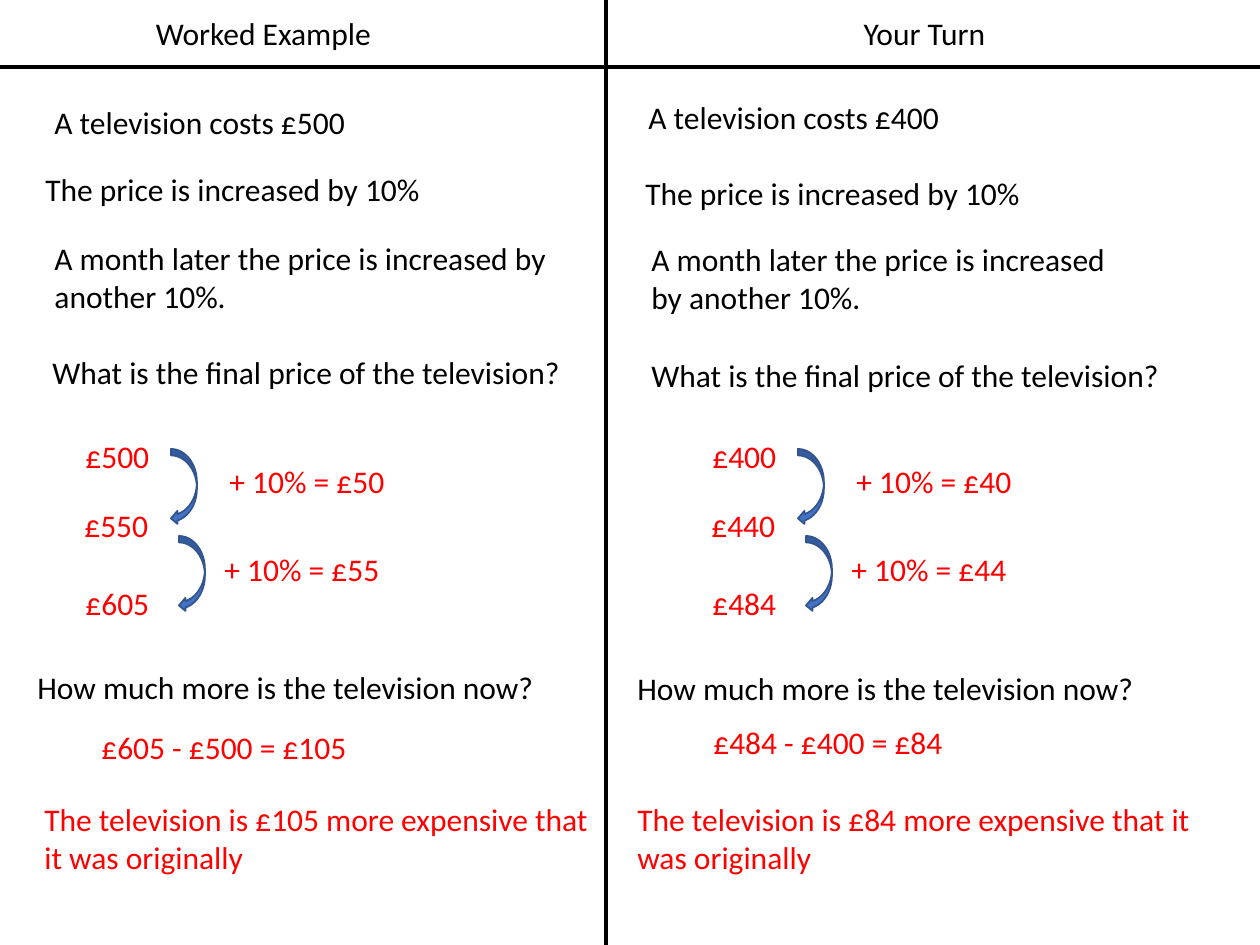
from pptx import Presentation
from pptx import util as u
from pptx.dml.color import RGBColor
from pptx.enum import shapes, text
from lxml import etree
from pptx.oxml.ns import qn

PX = 914400 // 126
WIDTH, HEIGHT = 1260, 945
BLACK = RGBColor(0x00, 0x00, 0x00)
RED = RGBColor(0xFF, 0x00, 0x00)
BLUE = RGBColor(0x44, 0x72, 0xC4)
DARK_BLUE = RGBColor(0x32, 0x54, 0x91)
LINE_H, TWO_LINES_H = 50, 89

DIVIDERS = [(606, 0, 606, HEIGHT), (0, 67, WIDTH, 67)]

# Each text: words, left, top, width
COLUMNS = [
    {
        "title": ("Worked Example", 142, 8, 243),
        "one_line": [
            ("A television costs £500", 42, 97, 319),
            ("The price is increased by 10%", 33, 164, 404),
            ("What is the final price of the television?", 40, 347, 539),
            ("How much more is the television now?", 25, 662, 528),
        ],
        "later": ("A month later the price is increased by another 10%.", 42, 233, 539),
        "working_left": 72,
        "prices": ["£500", "£550", "£605"],
        "increases": ["+ 10% = £50", "+ 10% = £55"],
        "difference": ("£605 - £500 = £105", 89, 722, 278),
        "conclusion": ("The television is £105 more expensive that it was originally",
                       32, 794, 593),
    },
    {
        "title": ("Your Turn", 803, 8, 243),
        "one_line": [
            ("A television costs £400", 636, 92, 319),
            ("The price is increased by 10%", 633, 168, 404),
            ("What is the final price of the television?", 639, 350, 539),
            ("How much more is the television now?", 625, 663, 528),
        ],
        "later": ("A month later the price is increased by another 10%.", 639, 234, 507),
        "working_left": 699,
        "prices": ["£400", "£440", "£484"],
        "increases": ["+ 10% = £40", "+ 10% = £44"],
        "difference": ("£484 - £400 = £84", 701, 717, 278),
        "conclusion": ("The television is £84 more expensive that it was originally",
                       625, 794, 593),
    },
]
# Offsets from working_left, then tops
PRICE_SPOTS = [(1, 431), (0, 500), (1, 578)]
ARROW_SPOTS = [(99, 449), (107, 536)]
INCREASE_SPOTS = [(145, 456), (140, 544)]


def emu(*lengths):
    return [n * PX for n in lengths]


def add_text(parent, words, left, top, width, height=LINE_H, color=BLACK,
             wrap=True, align=text.PP_ALIGN.LEFT):
    tf = parent.add_textbox(*emu(left, top, width, height)).text_frame
    tf.word_wrap = wrap
    tf.auto_size = text.MSO_AUTO_SIZE.SHAPE_TO_FIT_TEXT
    p = tf.paragraphs[0]
    p.text = words
    p.alignment = align
    font = p.runs[0].font
    font.name, font.size = "Calibri", u.Pt(18)
    font.color.rgb = color


def add_divider(parent, *ends):
    line = parent.add_connector(shapes.MSO_CONNECTOR.STRAIGHT, *emu(*ends))
    line.line.color.rgb = BLACK
    line.line.width = u.Pt(2.5)
    etree.SubElement(line._element.spPr, qn("a:effectLst"))


def add_arrow(parent, left, top):
    sp = parent.add_shape(shapes.MSO_SHAPE.CURVED_LEFT_ARROW, *emu(left, top, 26, 76))
    sp.shadow.inherit = False
    sp.fill.solid()
    sp.fill.fore_color.rgb = BLUE
    sp.line.color.rgb = DARK_BLUE
    sp.line.width = u.Pt(1)


def add_working(parent, column):
    """Prices down the side, each step grouped as an arrow and its increase."""
    left = column["working_left"]
    for price, (dx, top) in zip(column["prices"], PRICE_SPOTS):
        add_text(parent, price, left + dx, top, 100, color=RED)
    for words, arrow, label in zip(column["increases"], ARROW_SPOTS, INCREASE_SPOTS):
        step = parent.add_group_shape().shapes
        add_arrow(step, left + arrow[0], arrow[1])
        add_text(step, words, left + label[0], label[1], 208, color=RED)


def add_column(parent, column):
    add_text(parent, *column["title"], align=text.PP_ALIGN.CENTER)
    for line in column["one_line"]:
        add_text(parent, *line, wrap=False)
    add_text(parent, *column["later"], height=TWO_LINES_H)
    add_working(parent, column)
    add_text(parent, *column["difference"], color=RED)
    add_text(parent, *column["conclusion"], height=TWO_LINES_H, color=RED)


def main():
    prs = Presentation()
    prs.slide_width, prs.slide_height = emu(WIDTH, HEIGHT)
    s = prs.slides.add_slide(prs.slide_layouts[6])
    for ends in DIVIDERS:
        add_divider(s.shapes, *ends)
    for column in COLUMNS:
        add_column(s.shapes, column)
    prs.save("out.pptx")


if __name__ == "__main__":
    main()
